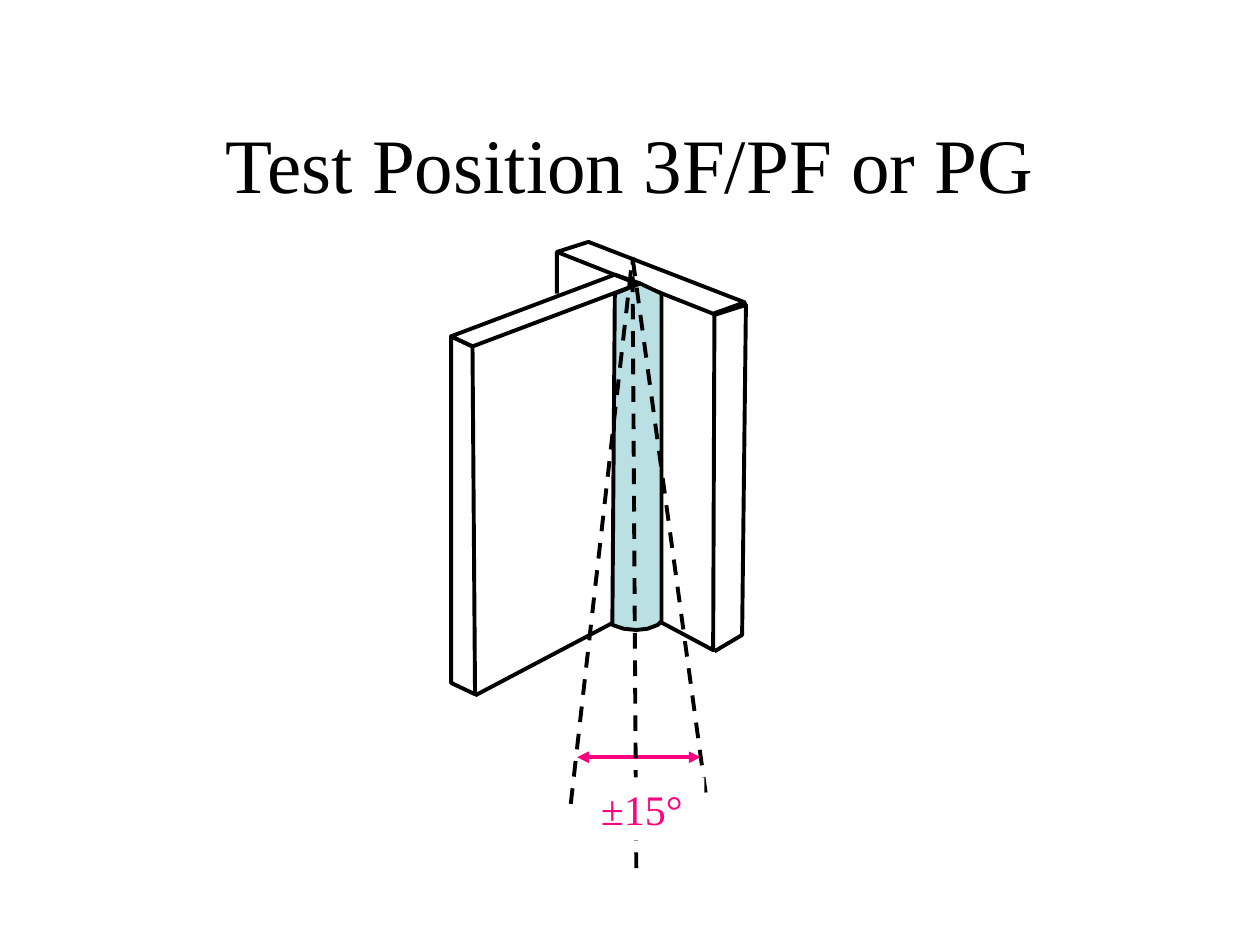
from lxml.etree import SubElement
from pptx import Presentation
from pptx.dml.color import RGBColor
from pptx.enum.dml import MSO_LINE
from pptx.enum.shapes import MSO_CONNECTOR, MSO_SHAPE
from pptx.enum.text import MSO_ANCHOR, PP_ALIGN
from pptx.oxml.ns import qn
from pptx.util import Inches, Pt

BLACK = RGBColor(0x00, 0x00, 0x00)
WHITE = RGBColor(0xFF, 0xFF, 0xFF)
PINK = RGBColor(0xFF, 0x00, 0x80)
WELD_BLUE = RGBColor(0xBB, 0xE0, 0xE3)


class Drawing:
    """Style and current slide; lengths are cells of a 1000 x 750 grid."""

    columns = 1000
    font_name = "Times New Roman"
    line_width = Pt(2.25)

    def __init__(self, presentation):
        self.cell = presentation.slide_width / self.columns
        self.slide = presentation.slides.add_slide(presentation.slide_layouts[5])

    def cells(self, *counts):
        return [round(count * self.cell) for count in counts]

    def set_text(self, shape, text, size, color, alignment):
        frame = shape.text_frame
        frame.text = text
        frame.word_wrap = True
        frame.vertical_anchor = MSO_ANCHOR.MIDDLE
        paragraph = frame.paragraphs[0]
        paragraph.alignment = alignment
        paragraph.font.name = self.font_name
        paragraph.font.size = Pt(size)
        paragraph.font.color.rgb = color

    def title(self, text, box):
        title = self.slide.shapes.title
        title.left, title.top, title.width, title.height = self.cells(*box)
        self.set_text(title, text, 44, BLACK, PP_ALIGN.CENTER)

    def outline(self, points, close=False, fill=None):
        builder = self.slide.shapes.build_freeform(*points[0], scale=self.cell)
        builder.add_line_segments(points[1:], close=close)
        shape = builder.convert_to_shape()
        shape.shadow.inherit = False
        if fill is None:
            shape.fill.background()
        else:
            shape.fill.solid()
            shape.fill.fore_color.rgb = fill
        shape.line.color.rgb = BLACK
        shape.line.width = self.line_width

    def line(self, start, end, color=BLACK, dash=None, arrows=False):
        connector = self.slide.shapes.add_connector(
            MSO_CONNECTOR.STRAIGHT, *self.cells(*start, *end))
        connector.line.color.rgb = color
        connector.line.width = self.line_width
        if dash is not None:
            connector.line.dash_style = dash
        properties = connector._element.spPr
        if arrows:
            line_element = properties.find(qn("a:ln"))
            for tag in ("a:headEnd", "a:tailEnd"):
                SubElement(line_element, qn(tag), type="triangle")
        SubElement(properties, qn("a:effectLst"))

    def label(self, text, box):
        shape = self.slide.shapes.add_shape(MSO_SHAPE.RECTANGLE, *self.cells(*box))
        shape.shadow.inherit = False
        shape.fill.solid()
        shape.fill.fore_color.rgb = WHITE
        shape.line.fill.background()
        self.set_text(shape, text, 24, PINK, PP_ALIGN.LEFT)


def main():
    presentation = Presentation()
    presentation.slide_width = Inches(10)
    presentation.slide_height = Inches(7.5)
    drawing = Drawing(presentation)
    drawing.title("Test Position 3F/PF or PG", (75, 67, 850, 125))

    # Angle range arrow
    drawing.line((458, 601), (556, 601), color=PINK, arrows=True)

    # Front plate: end face and top face
    drawing.outline([(358, 267), (375, 275), (377, 551), (358, 542)], close=True)
    drawing.outline([(358, 267), (488, 218), (508, 225), (375, 275)], close=True)

    # Rear plate: top face, then the lower edges and end face
    drawing.outline([(442, 233), (442, 200), (467, 192), (591, 240),
                     (566, 249), (442, 200)])
    drawing.outline([(377, 552), (506, 484), (566, 516), (567, 250),
                     (592, 242), (589, 504), (567, 517)])

    # Fillet weld: top edge and body
    drawing.outline([(487, 233), (501, 238), (516, 237), (525, 233)])
    drawing.outline([(486, 496), (488, 233), (508, 225), (525, 233), (525, 493),
                     (522, 496), (514, 499), (505, 500), (495, 499)],
                    close=True, fill=WELD_BLUE)

    # Weld axis and its two limits
    apex = (502, 204)
    for foot in ((560, 629), (453, 638), (505, 689)):
        drawing.line(foot, apex, dash=MSO_LINE.DASH)

    # Angle label
    drawing.label("±15°", (467, 617, 92, 50))
    presentation.save("out.pptx")


if __name__ == "__main__":
    main()
